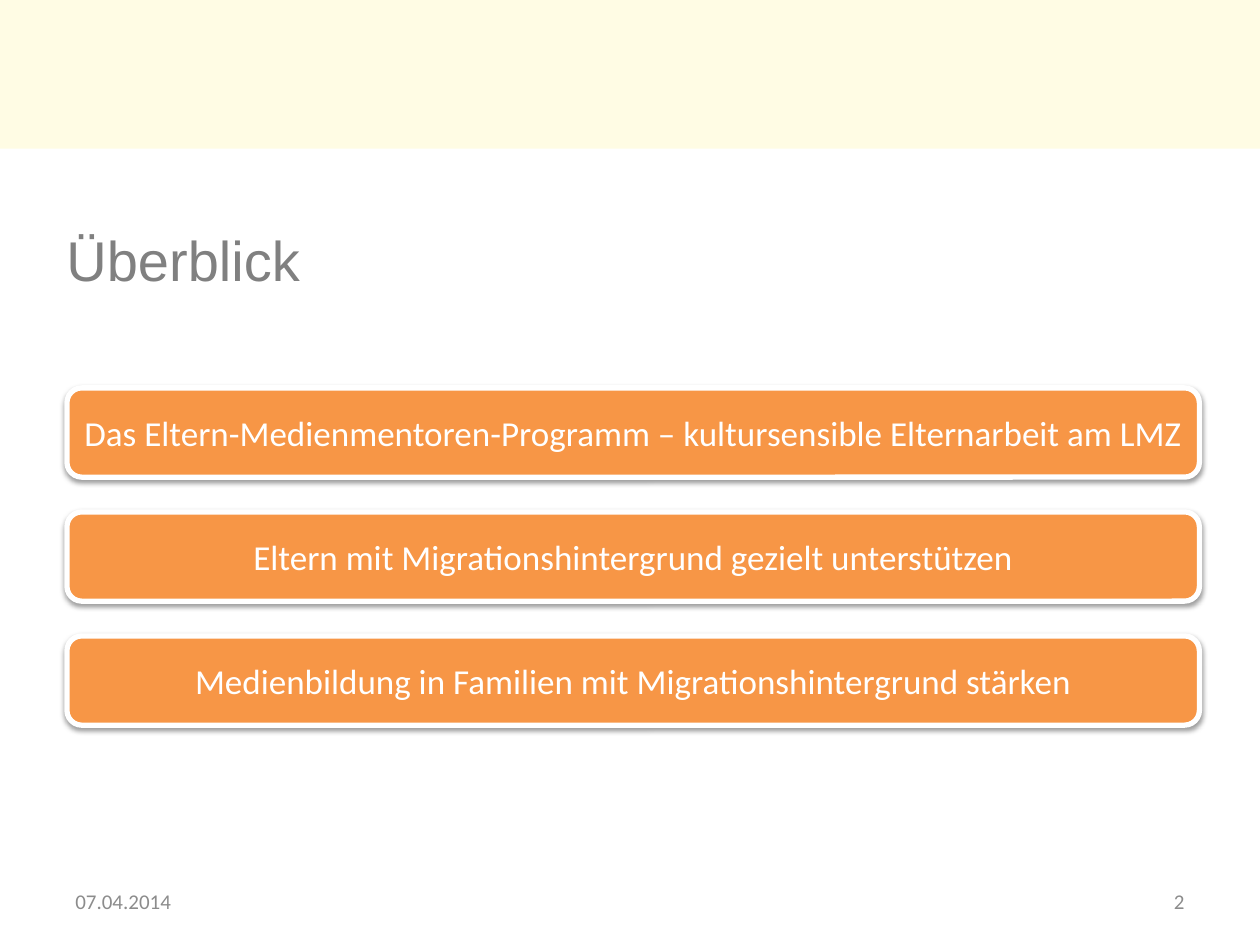
"""Build the overview slide with three topic bars."""
from dataclasses import dataclass

import lxml.etree
import pptx
import pptx.dml.color
import pptx.enum.shapes
import pptx.enum.text
import pptx.oxml.ns
import pptx.util

Cm = pptx.util.Cm
Pt = pptx.util.Pt
MSO_SHAPE = pptx.enum.shapes.MSO_SHAPE
PP_ALIGN = pptx.enum.text.PP_ALIGN
qn = pptx.oxml.ns.qn

COLORS = {
    "banner": "FFFCE4",
    "title": "808080",
    "footer": "8C8C8C",
    "bar": "F79646",
    "white": "FFFFFF",
    "shadow": "000000",
}
TOPICS = [
    "Das Eltern-Medienmentoren-Programm – kultursensible Elternarbeit am LMZ",
    "Eltern mit Migrationshintergrund gezielt unterstützen",
    "Medienbildung in Familien mit Migrationshintergrund stärken",
]
BAR_TOP, BAR_PITCH = 7.82, 2.5


@dataclass
class Label:
    text: str
    left: float
    top: float
    width: float
    height: float
    size: int
    font: str
    color: str
    align: PP_ALIGN = PP_ALIGN.LEFT


LABELS = [
    Label("Überblick", 1.09, 3.73, 8.4, 3, 32, "Arial", "title"),
    Label("07.04.2014", 1.27, 17.65, 3.43, 1.02, 12, "Calibri", "footer"),
    Label("2", 22.5, 17.65, 1.63, 1.02, 12, "Calibri", "footer", PP_ALIGN.RIGHT),
]
BARS = [
    Label(topic, 1.35, BAR_TOP + i * BAR_PITCH, 22.83, 1.8, 20, "Calibri", "white", PP_ALIGN.CENTER)
    for i, topic in enumerate(TOPICS)
]


def rgb(name: str) -> pptx.dml.color.RGBColor:
    """Look up a named colour."""
    return pptx.dml.color.RGBColor.from_string(COLORS[name])


def write_text(shape, label: Label) -> None:
    """Fill a shape with the label's formatted text."""
    tf = shape.text_frame
    tf.word_wrap = True
    tf.vertical_anchor = pptx.enum.text.MSO_ANCHOR.MIDDLE
    p = tf.paragraphs[0]
    p.text = label.text
    p.alignment = label.align
    p.font.size = Pt(label.size)
    p.font.name = label.font
    p.font.color.rgb = rgb(label.color)


def add_label(s, label: Label) -> None:
    """Add a plain text box."""
    box = s.shapes.add_textbox(Cm(label.left), Cm(label.top), Cm(label.width), Cm(label.height))
    write_text(box, label)


def add_shadow(shape) -> None:
    """Give a shape a soft shadow below it."""
    effects = shape._element.spPr.find(qn("a:effectLst"))
    outer = lxml.etree.SubElement(
        effects, qn("a:outerShdw"), blurRad=str(Pt(3.1)), dist=str(Pt(1.6)), dir="5400000", rotWithShape="0"
    )
    color = lxml.etree.SubElement(outer, qn("a:srgbClr"), val=COLORS["shadow"])
    lxml.etree.SubElement(color, qn("a:alpha"), val="38000")


def add_bar(s, label: Label) -> None:
    """Add a rounded topic bar with a white border."""
    bar = s.shapes.add_shape(
        MSO_SHAPE.ROUNDED_RECTANGLE, Cm(label.left), Cm(label.top), Cm(label.width), Cm(label.height)
    )
    bar.shadow.inherit = False
    bar.fill.solid()
    bar.fill.fore_color.rgb = rgb("bar")
    bar.line.color.rgb = rgb("white")
    bar.line.width = Pt(3)
    add_shadow(bar)
    write_text(bar, label)
    bar.text_frame.margin_left = bar.text_frame.margin_right = Cm(0.1)


def add_banner(s) -> None:
    """Add the pale band across the top."""
    banner = s.shapes.add_shape(MSO_SHAPE.RECTANGLE, 0, 0, Cm(25.4), Cm(3))
    banner.shadow.inherit = False
    banner.fill.solid()
    banner.fill.fore_color.rgb = rgb("banner")
    banner.line.fill.background()


def main() -> None:
    """Create and save the presentation."""
    prs = pptx.Presentation()
    prs.slide_width, prs.slide_height = Cm(25.4), Cm(19.05)
    s = prs.slides.add_slide(prs.slide_layouts[6])
    add_banner(s)
    for label in LABELS:
        add_label(s, label)
    for bar in BARS:
        add_bar(s, bar)
    prs.save("out.pptx")


if __name__ == "__main__":
    main()
